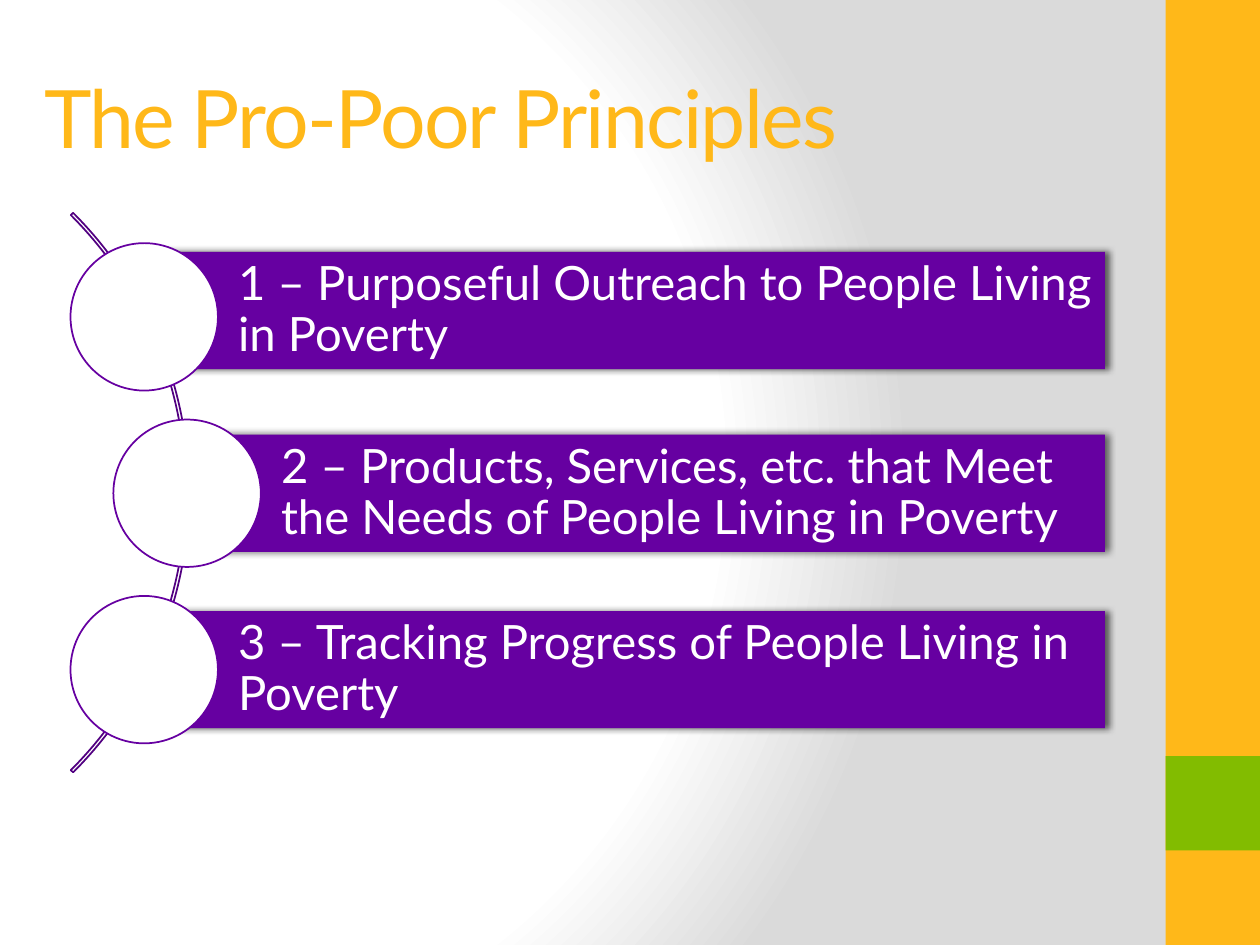
"""Build the slide of the three Pro-Poor Principles."""
from dataclasses import dataclass
from typing import Optional

from lxml import etree
from pptx import Presentation
from pptx.dml.color import RGBColor
from pptx.enum import shapes, text
from pptx.oxml import parse_xml
from pptx.oxml.ns import nsdecls
from pptx.util import Pt

EMU_PER_PX = 9144
AMBER, GREEN, WHITE = "FFB819", "82BC00", "FFFFFF"
PURPLE, DARK_PURPLE = "6600A1", "520081"
BAR_RIGHT, BAR_HEIGHT, CIRCLE_SIZE = 877, 93, 117
BAR_FRAME = {"margin_left": 74, "margin_top": 7, "margin_right": 7, "margin_bottom": 7}
TEXT_FRAME = {
    "word_wrap": True,
    "auto_size": text.MSO_AUTO_SIZE.NONE,
    "vertical_anchor": text.MSO_ANCHOR.MIDDLE,
}
BACKGROUND_STOPS = ((0, WHITE), (75, WHITE), (100, "DADADA"))


@dataclass(frozen=True)
class Box:
    left: int
    top: int
    width: int
    height: int

    def emu(self) -> tuple:
        return tuple(px(v) for v in (self.left, self.top, self.width, self.height))


@dataclass(frozen=True)
class Principle:
    label: str
    bar_left: int
    bar_top: int
    circle_left: int
    circle_top: int


PRINCIPLES = (
    Principle("1 – Purposeful Outreach to People Living in Poverty", 115, 200, 56, 193),
    Principle("2 – Products, Services, etc. that Meet the Needs of People Living in Poverty",
              149, 345, 90, 333),
    Principle("3 – Tracking Progress of People Living in Poverty", 115, 485, 56, 473),
)


def px(value: int) -> int:
    return value * EMU_PER_PX


def color(value: str) -> RGBColor:
    return RGBColor.from_string(value)


def set_values(target, values: dict) -> None:
    for name, value in values.items():
        setattr(target, name, value)


def set_background(slide) -> None:
    slide.background.fill.solid()
    properties = slide._element.cSld.find(".//{*}bgPr")
    stops = "".join(f'<a:gs pos="{position * 1000}"><a:srgbClr val="{value}"/></a:gs>'
                    for position, value in BACKGROUND_STOPS)
    properties.replace(properties[0], parse_xml(
        f'<a:gradFill {nsdecls("a")} rotWithShape="1"><a:gsLst>{stops}</a:gsLst>'
        '<a:path path="circle"><a:fillToRect l="20000" t="50000" r="100000" b="50000"/>'
        '</a:path></a:gradFill>'))


def add_shape(slide, kind, box: Box, fill: Optional[str] = None, line: Optional[str] = None):
    shape = slide.shapes.add_shape(kind, *box.emu())
    shape.shadow.inherit = False
    if fill:
        shape.fill.solid()
        shape.fill.fore_color.rgb = color(fill)
    else:
        shape.fill.background()
    if line:
        shape.line.color.rgb = color(line)
        shape.line.width = Pt(1)
    else:
        shape.line.fill.background()
    return shape


def add_shadow(shape) -> None:
    effects = shape._element.spPr.find("{*}effectLst")
    effects.append(parse_xml(
        f'<a:outerShdw {nsdecls("a")} blurRad="{Pt(4)}" dist="{Pt(2)}" dir="0" '
        'rotWithShape="0"><a:srgbClr val="000000"><a:alpha val="60000"/></a:srgbClr>'
        '</a:outerShdw>'))


def write(shape, label: str, size: int, font_color: str, line_spacing: Optional[float] = None):
    frame = shape.text_frame
    set_values(frame, TEXT_FRAME)
    paragraph = frame.paragraphs[0]
    set_values(paragraph, {"alignment": text.PP_ALIGN.LEFT, "line_spacing": line_spacing})
    run = paragraph.add_run()
    run.text = label
    set_values(run.font, {"name": "Lato", "size": Pt(size)})
    run.font.color.rgb = color(font_color)
    return run


def add_title(slide) -> None:
    title = slide.shapes.title
    set_values(title, dict(zip(("left", "top", "width", "height"), Box(25, 30, 900, 125).emu())))
    run = write(title, "The Pro-Poor Principles", 46, AMBER)
    run.font._element.set("spc", "-100")


def add_principle(slide, principle: Principle) -> None:
    bar = add_shape(slide, shapes.MSO_SHAPE.RECTANGLE,
                    Box(principle.bar_left, principle.bar_top,
                        BAR_RIGHT - principle.bar_left, BAR_HEIGHT), PURPLE)
    add_shadow(bar)
    set_values(bar.text_frame, {name: px(value) for name, value in BAR_FRAME.items()})
    write(bar, principle.label, 27, WHITE, 0.9)
    add_shape(slide, shapes.MSO_SHAPE.OVAL,
              Box(principle.circle_left, principle.circle_top, CIRCLE_SIZE, CIRCLE_SIZE),
              WHITE, PURPLE)


def main() -> None:
    presentation = Presentation()
    set_values(presentation, {"slide_width": px(1000), "slide_height": px(750)})
    slide = presentation.slides.add_slide(presentation.slide_layouts[5])
    set_background(slide)
    add_shape(slide, shapes.MSO_SHAPE.RECTANGLE, Box(925, 0, 75, 750), AMBER)
    add_shape(slide, shapes.MSO_SHAPE.RECTANGLE, Box(925, 600, 75, 75), GREEN)
    add_title(slide)
    arc = add_shape(slide, shapes.MSO_SHAPE.BLOCK_ARC, Box(-478, 77, 628, 628), line=DARK_PURPLE)
    for index, value in enumerate((189, 27, 0.004)):
        arc.adjustments[index] = value
    for principle in PRINCIPLES:
        add_principle(slide, principle)
    presentation.save("out.pptx")


if __name__ == "__main__":
    main()
